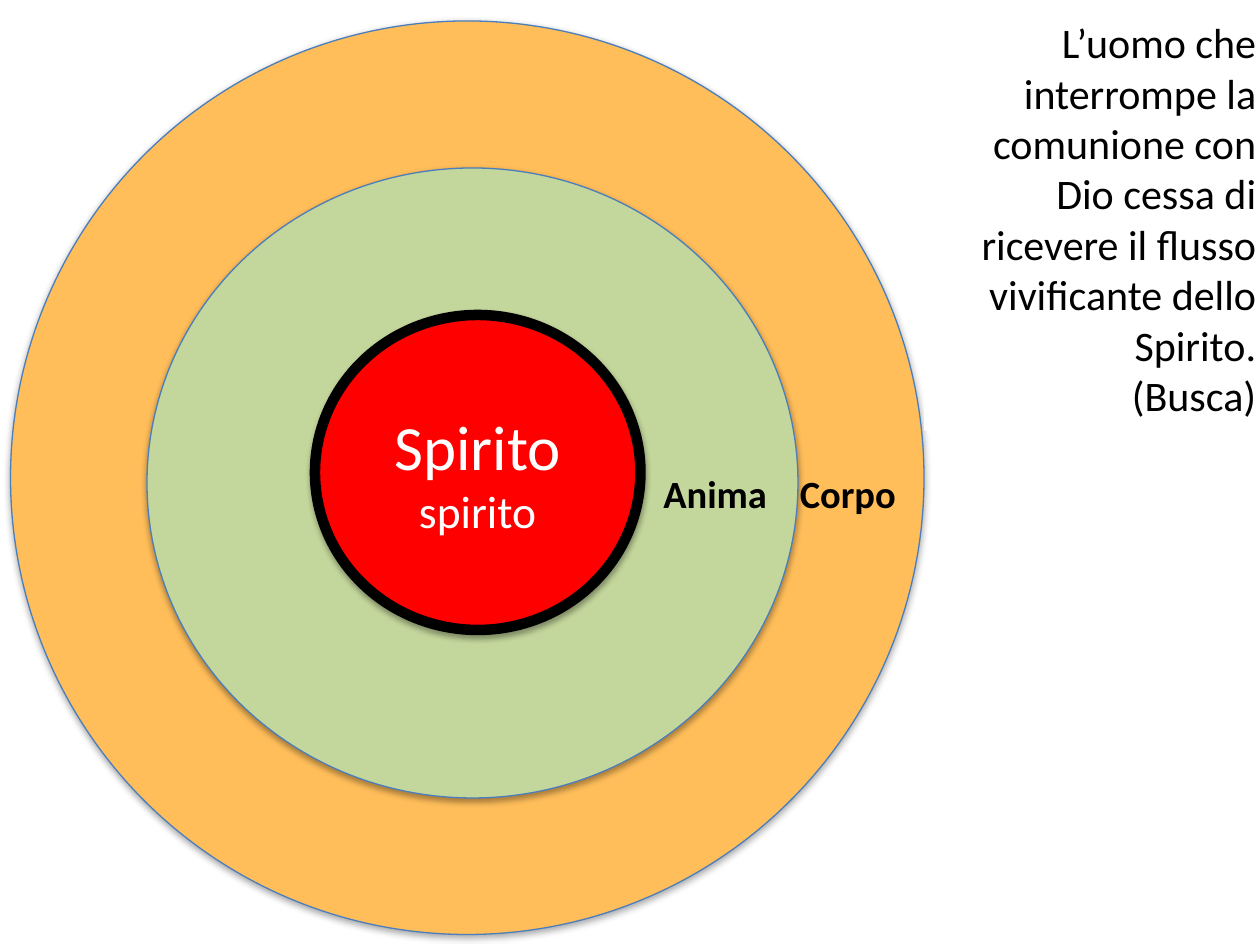
"""Build a slide of three nested circles: body, soul and spirit."""
from lxml import etree
from pptx import Presentation
from pptx.dml.color import RGBColor as Color
from pptx.enum.shapes import MSO_SHAPE as Shape
from pptx.enum.text import MSO_ANCHOR as Anchor, PP_ALIGN as Align
from pptx.oxml import parse_xml
from pptx.oxml.ns import nsdecls, qn
from pptx.util import Inches, Pt

COLORS = {
    "body": "FFBE5A",
    "soul": "C3D69B",
    "spirit": "FF0000",
    "edge": "4B7EBC",
    "black": "000000",
    "white": "FFFFFF",
}
SHADOW = (
    f'<a:effectLst {nsdecls("a")}>'
    '<a:outerShdw blurRad="40000" dist="23000" dir="5400000" rotWithShape="0">'
    '<a:srgbClr val="000000"><a:alpha val="35000"/></a:srgbClr>'
    "</a:outerShdw></a:effectLst>"
)

deck = Presentation()
deck.slide_width, deck.slide_height = Inches(10), Inches(7.5)
page = deck.slides.add_slide(deck.slide_layouts[6])
COLUMN, ROW = deck.slide_width / 120, deck.slide_height / 90


def place(left, top, width, height):
    return [round(n * unit) for n, unit in zip((left, top, width, height), (COLUMN, ROW) * 2)]


def write(box, lines, color, align, bold=False):
    frame = box.text_frame
    frame.word_wrap = True
    for index, (text, size) in enumerate(lines):
        para = frame.add_paragraph() if index else frame.paragraphs[0]
        para.text = text
        para.alignment = align
        para.font.name, para.font.size, para.font.bold = "Calibri", Pt(size), bold
        para.font.color.rgb = Color.from_string(COLORS[color])


rings = [
    ("body", (1, 2, 87, 87), "edge", 0.75),
    ("soul", (14, 16, 62, 60), "edge", 0.75),
    ("spirit", (30, 30, 31, 30), "black", 6),
]
for fill, area, edge, weight in rings:
    ring = page.shapes.add_shape(Shape.OVAL, *place(*area))
    ring.fill.solid()
    ring.fill.fore_color.rgb = Color.from_string(COLORS[fill])
    ring.line.color.rgb = Color.from_string(COLORS[edge])
    ring.line.width = Pt(weight)
    ring.element.spPr.append(parse_xml(SHADOW))

ring.text_frame.vertical_anchor = Anchor.MIDDLE
write(ring, [("Spirito", 36), ("spirito", 26)], "white", Align.CENTER)

for label, left in [("Anima", 62), ("Corpo", 75)]:
    box = page.shapes.add_textbox(*place(left, 44.2, 15, 5.9))
    write(box, [(label, 22)], "black", Align.LEFT, bold=True)

quote = page.shapes.add_shape(Shape.RECTANGLE, *place(88, 1, 32, 40))
quote.shadow.inherit = False
quote.fill.solid()
quote.fill.fore_color.rgb = Color.from_string(COLORS["white"])
quote.line.fill.background()
quote.text_frame.vertical_anchor = Anchor.TOP
quote.text_frame.margin_right = Inches(0.03)
sentence = (
    "L’uomo che interrompe la comunione con Dio cessa di "
    "ricevere il flusso vivificante dello Spirito."
)
write(quote, [(sentence, 24), ("(Busca)", 24)], "black", Align.RIGHT)

deck.save("out.pptx")
